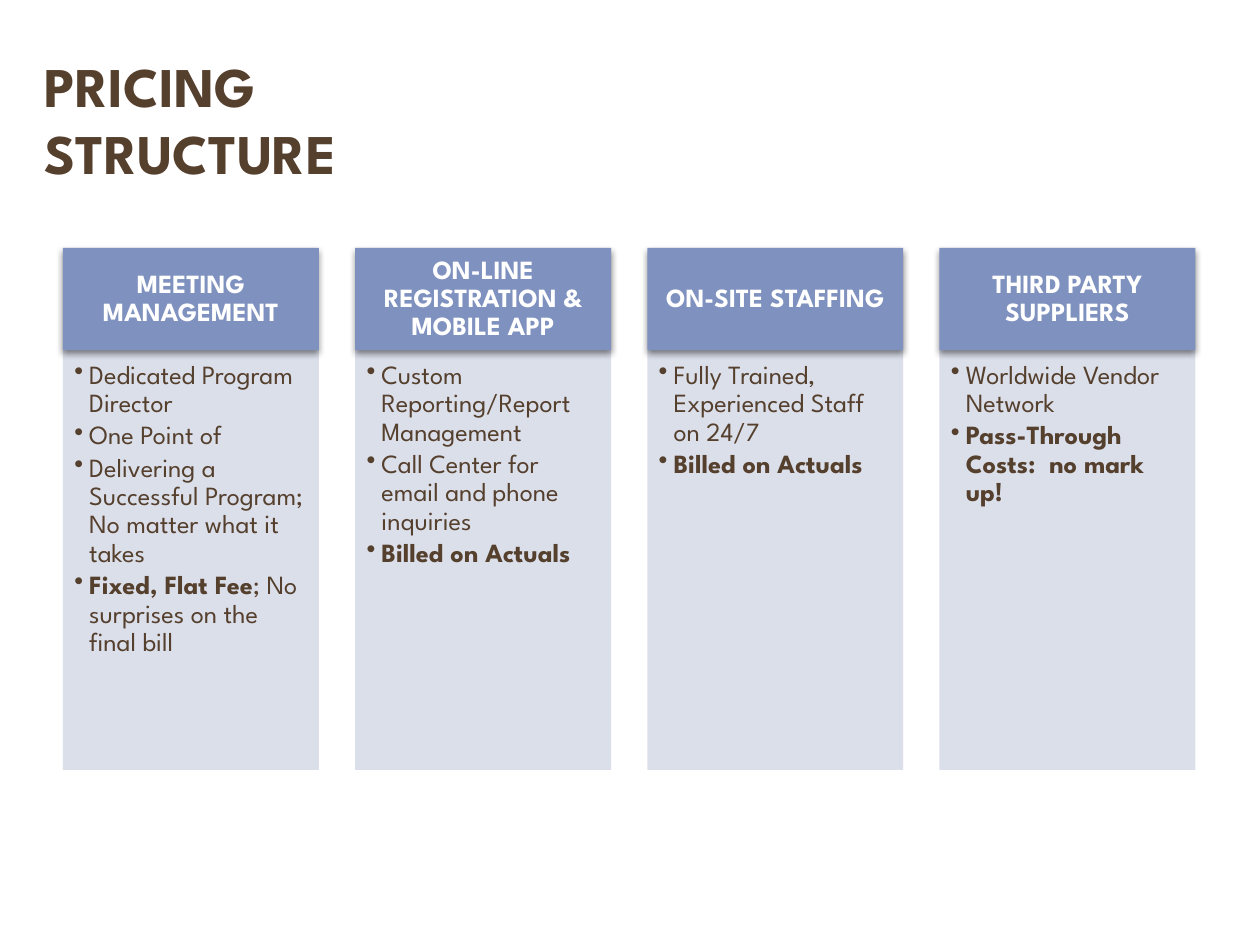
import lxml.etree
import pptx
import pptx.dml.color
import pptx.enum.shapes
import pptx.enum.text
import pptx.oxml.ns
import pptx.util

Cm = pptx.util.Cm
Pt = pptx.util.Pt
ALIGN = pptx.enum.text.PP_ALIGN
ANCHOR = pptx.enum.text.MSO_ANCHOR
qn = pptx.oxml.ns.qn

COLORS = {"brown": "553F2D", "header": "7F91BF", "panel": "D8DCE8",
          "white": "FFFFFF", "shadow": "000000"}

# Each bullet is a list of (text, bold) spans.
COLUMNS = [
    ("MEETING MANAGEMENT", [
        [("Dedicated Program Director", False)],
        [("One Point of", False)],
        [("Delivering a Successful Program; No matter what it takes", False)],
        [("Fixed, Flat Fee", True), ("; No surprises on the final bill", False)],
    ]),
    ("ON-LINE REGISTRATION & MOBILE APP", [
        [("Custom Reporting/Report Management", False)],
        [("Call Center for email and phone inquiries", False)],
        [("Billed on Actuals", True)],
    ]),
    ("ON-SITE STAFFING", [
        [("Fully Trained, Experienced Staff on 24/7", False)],
        [("Billed on Actuals", True)],
    ]),
    ("THIRD PARTY SUPPLIERS", [
        [("Worldwide Vendor Network", False)],
        [("Pass-Through Costs:  no mark up!", True)],
    ]),
]

LEFT, TOP, PITCH, WIDTH = 1.27, 5.0, 5.89, 5.16
HEADER_HEIGHT, PANEL_HEIGHT = 2.06, 8.46


def apply(target, values):
    for name, value in values.items():
        setattr(target, name, value)


def rgb(name):
    return pptx.dml.color.RGBColor.from_string(COLORS[name])


class Deck:
    font = "League Spartan"
    header_frame = {"margin_left": Cm(0.3), "margin_right": Cm(0.3),
                    "margin_top": Cm(0.18), "margin_bottom": Cm(0.18),
                    "vertical_anchor": ANCHOR.MIDDLE, "word_wrap": True}
    panel_frame = {"margin_left": Cm(0.23), "margin_right": Cm(0.3),
                   "margin_top": Cm(0.23), "margin_bottom": Cm(0.33),
                   "vertical_anchor": ANCHOR.TOP, "word_wrap": True}
    title_frame = {"vertical_anchor": ANCHOR.TOP, "word_wrap": True,
                   "auto_size": pptx.enum.text.MSO_AUTO_SIZE.NONE}

    def __init__(self):
        self.deck = pptx.Presentation()
        apply(self.deck, {"slide_width": Cm(25.4), "slide_height": Cm(19.05)})
        self.page = self.deck.slides.add_slide(self.deck.slide_layouts[5])

    def span(self, para, text, size, color, bold):
        span = para.add_run()
        span.text = text
        apply(span.font, {"name": self.font, "size": Pt(size), "bold": bold})
        span.font.color.rgb = rgb(color)

    def title(self, lines, left, top, width, height):
        box = self.page.shapes.title
        apply(box, {"left": Cm(left), "top": Cm(top),
                    "width": Cm(width), "height": Cm(height)})
        apply(box.text_frame, self.title_frame)
        para = box.text_frame.paragraphs[0]
        para.alignment = ALIGN.LEFT
        for index, line in enumerate(lines):
            if index:
                para.add_line_break()
            self.span(para, line, 32, "brown", True)

    def rectangle(self, left, top, width, height, fill):
        box = self.page.shapes.add_shape(
            pptx.enum.shapes.MSO_SHAPE.RECTANGLE,
            Cm(left), Cm(top), Cm(width), Cm(height))
        box.shadow.inherit = False
        box.fill.solid()
        box.fill.fore_color.rgb = rgb(fill)
        box.line.fill.background()
        return box

    def header(self, text, left, top, width, height):
        box = self.rectangle(left, top, width, height, "header")
        self.drop_shadow(box)
        apply(box.text_frame, self.header_frame)
        para = box.text_frame.paragraphs[0]
        apply(para, {"alignment": ALIGN.CENTER, "line_spacing": 0.9})
        self.span(para, text, 15, "white", True)

    def panel(self, bullets, left, top, width, height):
        """Translucent box with a bulleted list."""
        box = self.rectangle(left, top, width, height, "panel")
        color = box.fill._xPr.find(".//" + qn("a:srgbClr"))
        lxml.etree.SubElement(color, qn("a:alpha"), val="90000")
        frame = box.text_frame
        apply(frame, self.panel_frame)
        for index, spans in enumerate(bullets):
            para = frame.add_paragraph() if index else frame.paragraphs[0]
            self.bullet(para)
            apply(para, {"alignment": ALIGN.LEFT, "line_spacing": 0.9,
                         "space_after": Pt(2.25)})
            for text, bold in spans:
                self.span(para, text, 15, "brown", bold)

    def bullet(self, para):
        props = para._p.get_or_add_pPr()
        indent = Cm(0.3)
        props.set("marL", str(indent))
        props.set("indent", str(-indent))
        lxml.etree.SubElement(props, qn("a:buChar"), char="•")

    def drop_shadow(self, box):
        effects = box._element.spPr.find(qn("a:effectLst"))
        shadow = lxml.etree.SubElement(
            effects, qn("a:outerShdw"), blurRad=str(Pt(4)), dist=str(Pt(2)),
            dir="5400000", rotWithShape="0")
        color = lxml.etree.SubElement(shadow, qn("a:srgbClr"), val=COLORS["shadow"])
        lxml.etree.SubElement(color, qn("a:alpha"), val="45000")


def main():
    pricing = Deck()
    pricing.title(["PRICING ", "STRUCTURE"], 0.64, 0.91, 13.13, 3.0)
    for index, (heading, bullets) in enumerate(COLUMNS):
        left = LEFT + index * PITCH
        # The panel goes first so that the header's shadow falls on it.
        pricing.panel(bullets, left, TOP + HEADER_HEIGHT, WIDTH, PANEL_HEIGHT)
        pricing.header(heading, left, TOP, WIDTH, HEADER_HEIGHT)
    pricing.deck.save("out.pptx")


if __name__ == "__main__":
    main()
